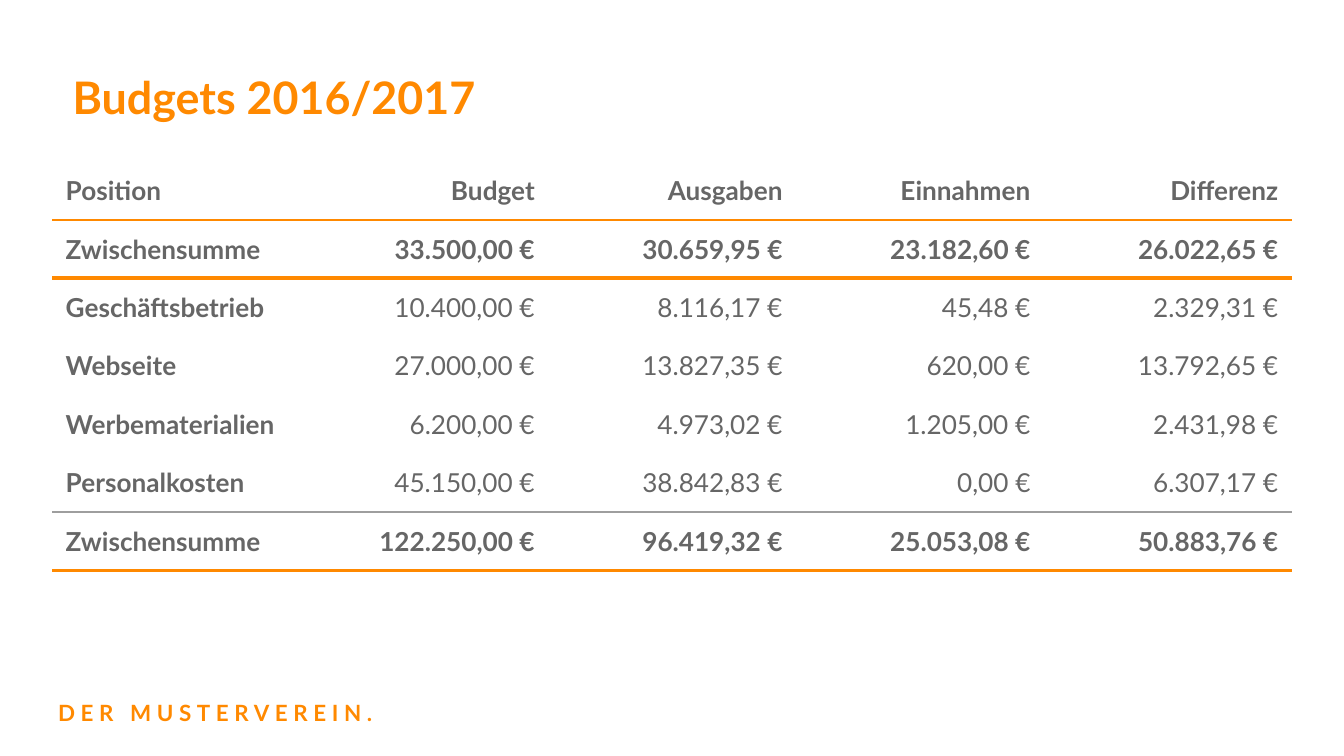
from lxml.etree import SubElement
from pptx import Presentation
from pptx.dml.color import RGBColor
from pptx.enum.text import MSO_ANCHOR, MSO_AUTO_SIZE, PP_ALIGN
from pptx.oxml.ns import qn
from pptx.util import Pt

ORANGE = RGBColor(0xFF, 0x89, 0x00)
GRAY = RGBColor(0x66, 0x66, 0x66)
SILVER = RGBColor(0x9E, 0x9E, 0x9E)
PLAIN = "{2D5ABB26-0587-4C30-8999-92F81FD0307C}"

ROWS = [
    ("Position", "Budget", "Ausgaben", "Einnahmen", "Differenz"),
    ("Zwischensumme", "33.500,00 €", "30.659,95 €", "23.182,60 €", "26.022,65 €"),
    ("Geschäftsbetrieb", "10.400,00 €", "8.116,17 €", "45,48 €", "2.329,31 €"),
    ("Webseite", "27.000,00 €", "13.827,35 €", "620,00 €", "13.792,65 €"),
    ("Werbematerialien", "6.200,00 €", "4.973,02 €", "1.205,00 €", "2.431,98 €"),
    ("Personalkosten", "45.150,00 €", "38.842,83 €", "0,00 €", "6.307,17 €"),
    ("Zwischensumme", "122.250,00 €", "96.419,32 €", "25.053,08 €", "50.883,76 €"),
]
BOLD = {0, 1, 6}
RULES = {0: (ORANGE, 0.75), 1: (ORANGE, 2.25), 5: (SILVER, 0.75), 6: (ORANGE, 2.25)}
WIDTHS = [150.5, 115.2, 132.8, 132.8, 132.8]


class Deck:
    font = "Lato"
    inset = Pt(7.2)

    def __init__(self, wide, high):
        self.file = Presentation()
        self.file.slide_width, self.file.slide_height = Pt(wide), Pt(high)
        self.slide = self.file.slides.add_slide(self.file.slide_layouts[5])

    def pad(self, item):
        item.margin_left = item.margin_right = self.inset
        item.margin_top = item.margin_bottom = self.inset
        item.vertical_anchor = MSO_ANCHOR.TOP

    def style(self, para, size, color, bold, align=PP_ALIGN.LEFT):
        para.alignment = align
        font = para.font
        font.name, font.size, font.bold = self.font, Pt(size), bold
        font.color.rgb = color

    def fill(self, shape, words, size):
        frame = shape.text_frame
        frame.word_wrap = True
        frame.auto_size = MSO_AUTO_SIZE.NONE
        self.pad(frame)
        para = frame.paragraphs[0]
        para.text = words
        self.style(para, size, ORANGE, True)
        return para

    def title(self, words, left, top, width, height):
        shape = self.slide.shapes.title
        shape.left, shape.top = Pt(left), Pt(top)
        shape.width, shape.height = Pt(width), Pt(height)
        self.fill(shape, words, 24).line_spacing = 1.15

    def label(self, words, left, top, width, height, gap):
        shape = self.slide.shapes.add_textbox(Pt(left), Pt(top), Pt(width), Pt(height))
        para = self.fill(shape, words, 12)
        para.runs[0].font._element.set("spc", str(round(gap * 100)))

    def border(self, cell, side, rule):
        line = SubElement(cell._tc.get_or_add_tcPr(), qn(f"a:ln{side}"))
        if rule is None:
            line.set("w", "0")
            SubElement(line, qn("a:noFill"))
            return
        color, width = rule
        line.set("w", str(Pt(width)))
        solid = SubElement(line, qn("a:solidFill"))
        SubElement(solid, qn("a:srgbClr"), val=str(color))
        SubElement(line, qn("a:prstDash"), val="solid")

    def table(self, rows, widths, left, top, height):
        shape = self.slide.shapes.add_table(
            len(rows), len(widths), Pt(left), Pt(top), Pt(sum(widths)), Pt(height * len(rows)))
        grid = shape.table
        grid.first_row = grid.horz_banding = False
        grid._tbl.tblPr.find(qn("a:tableStyleId")).text = PLAIN
        for col, width in zip(grid.columns, widths):
            col.width = Pt(width)
        for r, row in enumerate(rows):
            grid.rows[r].height = Pt(height)
            for c, words in enumerate(row):
                cell = grid.cell(r, c)
                self.pad(cell)
                para = cell.text_frame.paragraphs[0]
                para.text = words
                align = PP_ALIGN.RIGHT if c else PP_ALIGN.LEFT
                self.style(para, 14, GRAY, r in BOLD or c == 0, align)
                rules = (None, None, RULES.get(r - 1), RULES.get(r))
                for side, rule in zip("LRTB", rules):
                    self.border(cell, side, rule)
                cell.fill.background()


def main():
    deck = Deck(720, 405)
    deck.label("DER MUSTERVEREIN.", 24, 367.2, 223, 29.5, 3)
    deck.title("Budgets 2016/2017", 31.7, 26, 662, 46)
    deck.table(ROWS, WIDTHS, 28, 86.5, 31.3)
    deck.file.save("out.pptx")


if __name__ == "__main__":
    main()
